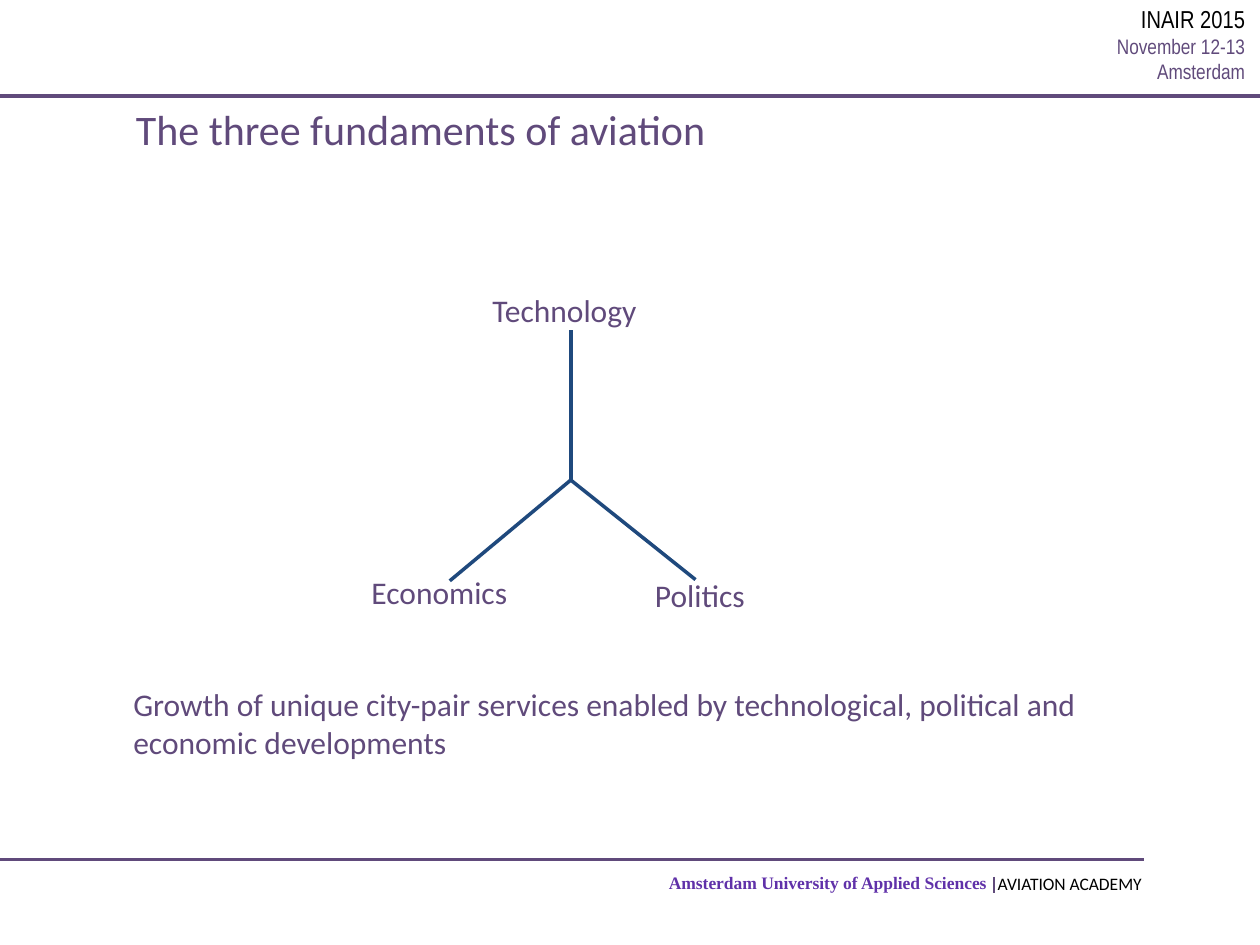
"""Build the slide on the three fundaments of aviation."""
from lxml import etree
from pptx import Presentation
from pptx import util as u
from pptx.dml.color import RGBColor
from pptx.enum import shapes, text
from pptx.oxml.ns import qn

PURPLE = RGBColor(0x60, 0x4A, 0x7B)
VIOLET = RGBColor(0x60, 0x31, 0xA9)
NAVY = RGBColor(0x1F, 0x49, 0x7D)
BLACK = RGBColor(0, 0, 0)


class Deck:
    """Hold the style and the current slide."""

    font = "Calibri"
    color = PURPLE

    def __init__(self, width, height):
        self.prs = Presentation()
        self.prs.slide_width = u.Inches(width)
        self.prs.slide_height = u.Inches(height)
        self.s = self.prs.slides.add_slide(self.prs.slide_layouts[6])

    def line(self, start, end, color=PURPLE, width=2, parent=None):
        """Draw a straight line on the slide or in a group."""
        points = [u.Inches(v) for v in (*start, *end)]
        sp = (parent or self.s).shapes.add_connector(
            shapes.MSO_CONNECTOR.STRAIGHT, *points)
        sp.line.color.rgb = color
        sp.line.width = u.Pt(width)
        etree.SubElement(sp._element.spPr, qn("a:effectLst"))

    def star(self, center, ends):
        """Draw grouped lines from a center to each end."""
        group = self.s.shapes.add_group_shape()
        for end in ends:
            self.line(center, end, NAVY, parent=group)

    def text(self, box, lines, font=None, bold=False, align=text.PP_ALIGN.LEFT):
        """Write lines of (wording, size, color), one paragraph each."""
        sp = self.s.shapes.add_textbox(*(u.Inches(v) for v in box))
        tf = sp.text_frame
        tf.word_wrap = True
        for i, (wording, size, color) in enumerate(lines):
            p = tf.add_paragraph() if i else tf.paragraphs[0]
            p.alignment = align
            r = p.add_run()
            r.text = wording
            r.font.name = font or self.font
            r.font.size = u.Pt(size)
            r.font.bold = bold
            r.font.color.rgb = color or self.color


def main():
    """Compose the slide and save it."""
    deck = Deck(10, 7.5)

    deck.line((0, 6.82), (9.08, 6.82))
    deck.text((5.21, 6.87, 2.76, 0.27),
              [("Amsterdam University of Applied Sciences", 10, VIOLET)],
              font="Times New Roman", bold=True)
    deck.line((0, 0.76), (10, 0.76))
    deck.text((7.74, -0.02, 2.24, 0.74),
              [("INAIR 2015", 14, BLACK),
               ("November 12-13", 12, PURPLE),
               ("Amsterdam", 12, PURPLE)],
              font="Arial Narrow", align=text.PP_ALIGN.RIGHT)
    deck.text((7.82, 6.88, 1.42, 0.27), [("AVIATION ACADEMY", 10, BLACK)])
    deck.line((7.89, 6.96), (7.89, 7.09), width=1)

    deck.text((0.98, 0.77, 7.81, 0.81),
              [("The three fundaments of aviation", 24, PURPLE)])
    deck.star((4.53, 3.81), [(4.53, 2.62), (5.52, 4.6), (3.57, 4.61)])
    for label, left, top, width in (("Technology", 3.81, 2.26, 1.5),
                                    ("Politics", 5.1, 4.52, 1),
                                    ("Economics", 2.85, 4.5, 1.5)):
        deck.text((left, top, width, 0.4), [(label, 18, PURPLE)])
    deck.text((0.96, 5.39, 7.84, 0.71),
              [("Growth of unique city-pair services enabled by technological, "
                "political and economic developments", 18, PURPLE)])

    deck.prs.save("out.pptx")


if __name__ == "__main__":
    main()
